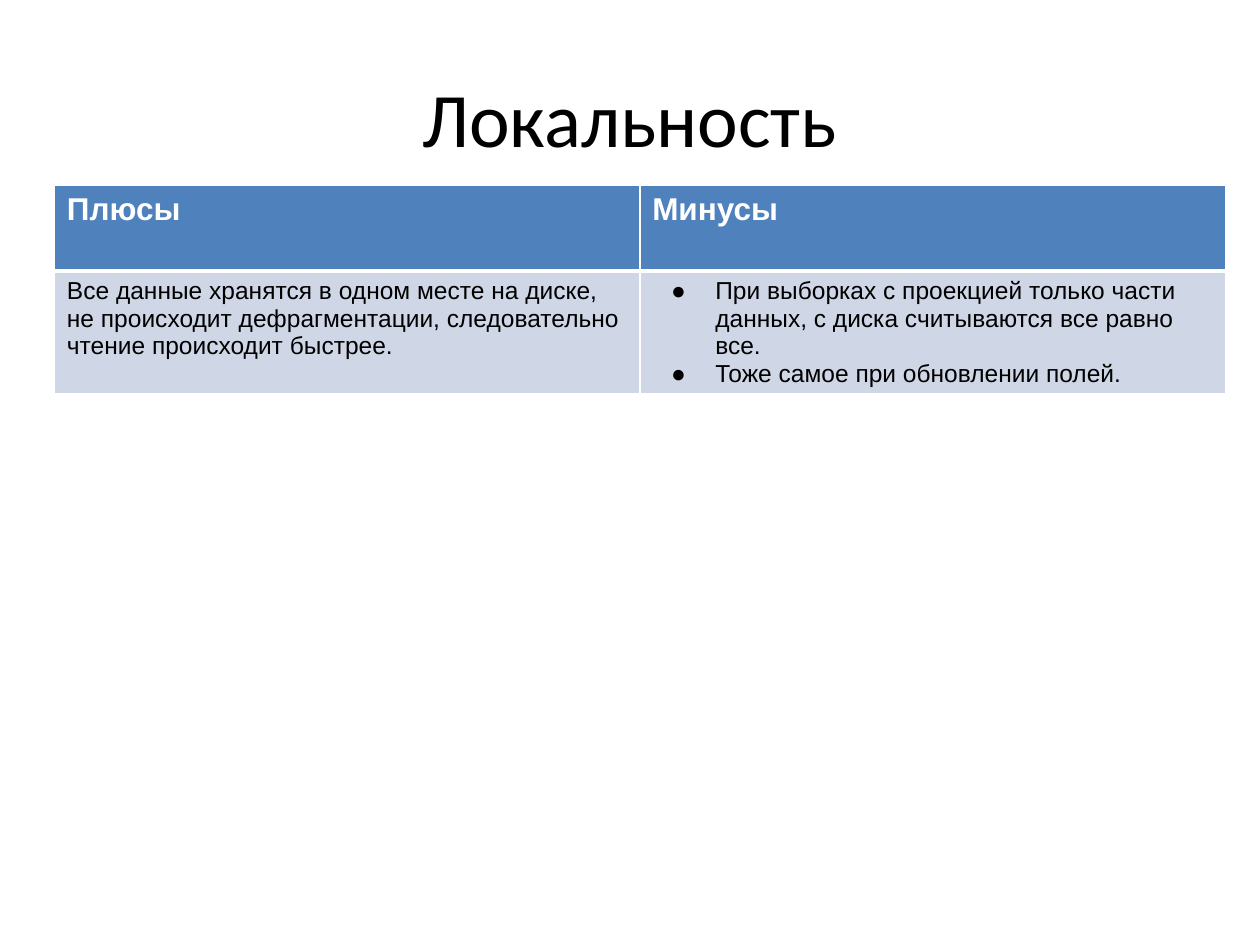
from dataclasses import dataclass

from lxml import etree
from pptx import Presentation
from pptx.dml.color import RGBColor
from pptx.enum.text import MSO_ANCHOR, PP_ALIGN
from pptx.oxml.ns import qn
from pptx.table import _Cell
from pptx.text.text import _Paragraph
from pptx.util import Cm, Pt

CENTER = PP_ALIGN.CENTER
MIDDLE = MSO_ANCHOR.MIDDLE
TOP = MSO_ANCHOR.TOP
TITLE_ONLY = 5

BLACK = "000000"
WHITE = "FFFFFF"
BLUE = "4F81BD"
PALE_BLUE = "CFD7E7"


@dataclass(frozen=True)
class RowStyle:
    fill: str
    color: str
    size: int
    bold: bool
    bottom_border: int


@dataclass(frozen=True)
class Entry:
    paragraphs: tuple[str, ...]
    bulleted: bool = False


HEADER = RowStyle(BLUE, WHITE, 18, True, 3)
BODY = RowStyle(PALE_BLUE, BLACK, 14, False, 1)

COMPARISON = (
    (HEADER, (Entry(("Плюсы",)), Entry(("Минусы",)))),
    (BODY, (
        Entry((
            "Все данные хранятся в одном месте на диске, не происходит "
            "дефрагментации, следовательно чтение происходит быстрее.",
        )),
        Entry((
            "При выборках с проекцией только части данных, "
            "с диска считываются все равно все.",
            "Тоже самое при обновлении полей.",
        ), bulleted=True),
    )),
)


def rgb(value: str) -> RGBColor:
    return RGBColor.from_string(value)


def add_text(paragraph: _Paragraph, text: str, font_name: str,
             size: int, color: str, bold: bool = False) -> None:
    run = paragraph.add_run()
    run.text = text
    run.font.name = font_name
    run.font.size = Pt(size)
    run.font.bold = bold
    run.font.color.rgb = rgb(color)


def add_bullet(paragraph: _Paragraph, color: str) -> None:
    properties = paragraph._p.get_or_add_pPr()
    properties.set("marL", str(Cm(1.27)))
    properties.set("indent", str(-Cm(0.89)))
    bullet_color = etree.SubElement(properties, qn("a:buClr"))
    etree.SubElement(bullet_color, qn("a:srgbClr"), val=color)
    etree.SubElement(properties, qn("a:buFont"), typeface="Arial")
    etree.SubElement(properties, qn("a:buChar"), char="●")


def set_borders(cell: _Cell, top: int, bottom: int) -> None:
    properties = cell._tc.get_or_add_tcPr()
    widths = {"a:lnL": 1, "a:lnR": 1, "a:lnT": top, "a:lnB": bottom}
    for position, (side, width) in enumerate(widths.items()):
        line = etree.Element(qn(side), w=str(Pt(width)))
        line_fill = etree.SubElement(line, qn("a:solidFill"))
        etree.SubElement(line_fill, qn("a:srgbClr"), val=WHITE)
        properties.insert(position, line)


def fill_cell(cell: _Cell, entry: Entry, style: RowStyle, top_border: int) -> None:
    cell.fill.solid()
    cell.fill.fore_color.rgb = rgb(style.fill)
    set_borders(cell, top_border, style.bottom_border)
    cell.vertical_anchor = TOP
    cell.margin_left = cell.margin_right = Cm(0.25)
    cell.margin_top = cell.margin_bottom = Cm(0.13)
    frame = cell.text_frame
    for index, text in enumerate(entry.paragraphs):
        paragraph = frame.add_paragraph() if index else frame.paragraphs[0]
        if entry.bulleted:
            add_bullet(paragraph, style.color)
        add_text(paragraph, text, "Arial", style.size, style.color, style.bold)


def main() -> None:
    presentation = Presentation()
    presentation.slide_width = Cm(25.4)
    presentation.slide_height = Cm(19.05)
    slide = presentation.slides.add_slide(presentation.slide_layouts[TITLE_ONLY])

    title = slide.shapes.title
    title.left, title.top = Cm(1.27), Cm(0.76)
    title.width, title.height = Cm(22.86), Cm(3.18)
    title.text_frame.vertical_anchor = MIDDLE
    heading = title.text_frame.paragraphs[0]
    heading.alignment = CENTER
    add_text(heading, "Локальность", "Calibri", 44, BLACK)

    column_width, row_height = Cm(11.8), Cm(1.73)
    comparison = slide.shapes.add_table(
        2, 2, Cm(1.1), Cm(3.73), 2 * column_width, 2 * row_height
    ).table
    top_border = 1
    for row, (style, entries) in enumerate(COMPARISON):
        for column, entry in enumerate(entries):
            fill_cell(comparison.cell(row, column), entry, style, top_border)
        top_border = style.bottom_border

    presentation.save("out.pptx")


if __name__ == "__main__":
    main()
